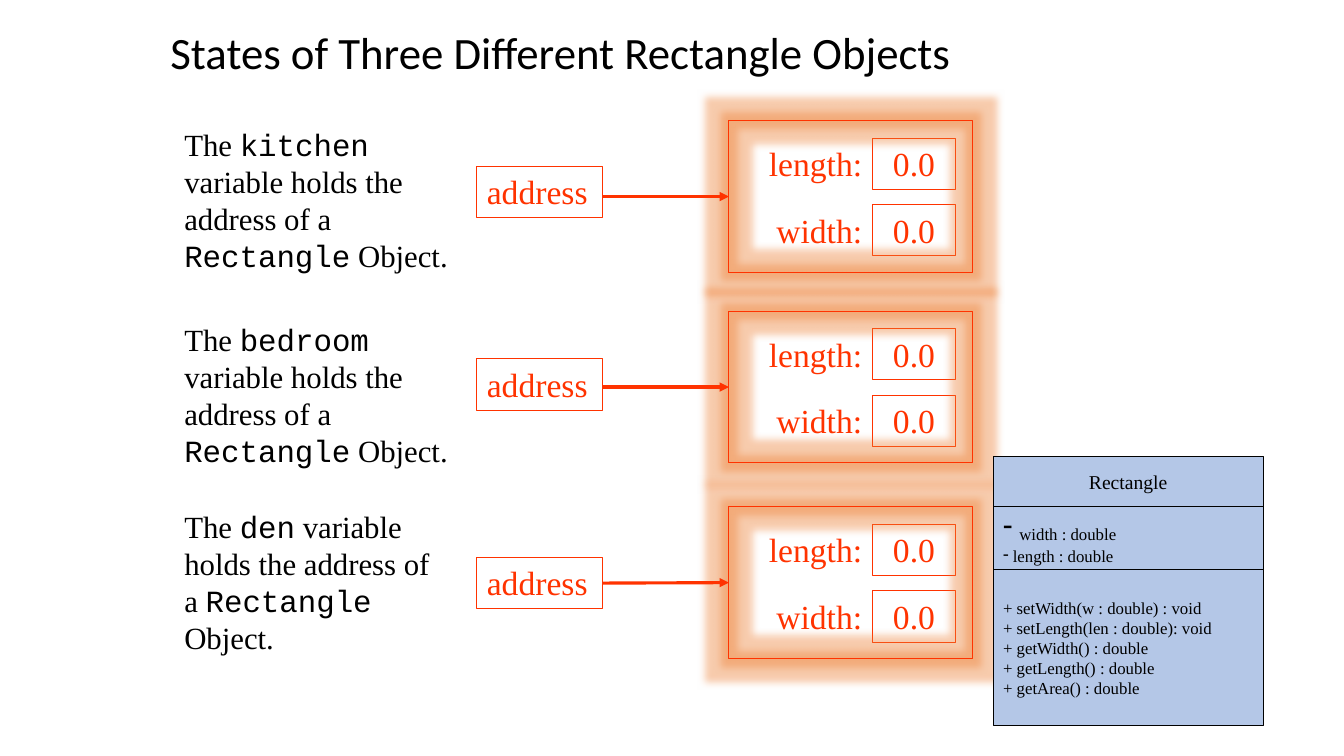
from lxml.etree import SubElement
from pptx import Presentation
from pptx.dml.color import RGBColor
from pptx.enum.shapes import MSO_CONNECTOR, MSO_SHAPE
from pptx.enum.text import MSO_ANCHOR as ANCHOR, MSO_AUTO_SIZE as FIT, PP_ALIGN as ALIGN
from pptx.oxml.ns import qn
from pptx.util import Inches, Pt

# Content
TITLE = "States of Three Different Rectangle Objects"
# variable, top of text, top of address box, top of object
VARIABLES = [
    ("kitchen", 1.2, 1.65, 1.2),
    ("bedroom", 3.13, 3.56, 3.09),
    ("den", 4.99, 5.53, 5.03),
]
FIELDS = [("length:", "0.0"), ("width:", "0.0")]
CLASS_NAME = "Rectangle"
ATTRIBUTES = [[(" ", {"size": 20}), "width : double"], " length : double"]
METHODS = [
    "+ setWidth(w : double) : void",
    "+ setLength(len : double): void",
    "+ getWidth() : double",
    "+ getLength() : double",
    "+ getArea() : double",
]

# Format
RED, BLACK, BLUE, GLOW = "FF3300", "000000", "B4C7E7", "ED7D31"
SERIF, MONO = "Times New Roman", "Courier New"

# Layout, in inches
ADDRESS_LEFT, ADDRESS_WIDTH, BOX_HEIGHT = 4.73, 1.25, 0.51
OBJECT_LEFT, OBJECT_WIDTH, OBJECT_HEIGHT = 7.23, 2.42, 1.5
LABEL_LEFT, LABEL_WIDTH, VALUE_LEFT, VALUE_WIDTH = 7.4, 1.25, 8.65, 0.83
FIELD_OFFSET, FIELD_PITCH = 0.17, 0.66
UML_LEFT, UML_WIDTH = 9.85, 2.68


def rgb(color):
    return RGBColor.from_string(color)


def write(shape, paragraphs, size=24, font=SERIF, color=RED, align=ALIGN.LEFT,
          anchor=ANCHOR.TOP, wrap=True, bullet=None):
    """Each paragraph is a string or a list of strings and (text, format) pairs."""
    frame = shape.text_frame
    frame.word_wrap, frame.vertical_anchor = wrap, anchor
    frame.auto_size = FIT.NONE
    for index, parts in enumerate(paragraphs):
        paragraph = frame.paragraphs[0] if index == 0 else frame.add_paragraph()
        paragraph.alignment = align
        if bullet:
            SubElement(paragraph._p.get_or_add_pPr(), qn("a:buChar")).set("char", bullet)
        for part in [parts] if isinstance(parts, str) else parts:
            text, extra = (part, {}) if isinstance(part, str) else part
            run = paragraph.add_run()
            run.text = text
            run.font.name = extra.get("font", font)
            run.font.size = Pt(extra.get("size", size))
            run.font.color.rgb = rgb(color)


def add_box(shapes, left, top, width, height, line=RED, fill=None):
    box = shapes.add_shape(MSO_SHAPE.RECTANGLE, *map(Inches, (left, top, width, height)))
    box.shadow.inherit = False
    if fill:
        box.fill.solid()
        box.fill.fore_color.rgb = rgb(fill)
    else:
        box.fill.background()
    box.line.color.rgb = rgb(line)
    box.line.width = Pt(0.75)
    return box


def add_label(shapes, left, top, width, height, paragraphs, **style):
    label = shapes.add_textbox(*map(Inches, (left, top, width, height)))
    write(label, paragraphs, **style)


def add_glow(shape, color, radius, opacity):
    effects = shape._element.spPr.find(qn("a:effectLst"))
    glow = SubElement(effects, qn("a:glow"), rad=str(Pt(radius)))
    tint = SubElement(glow, qn("a:srgbClr"), val=color)
    SubElement(tint, qn("a:alpha"), val=str(opacity * 1000))


def add_arrow(shapes, address, target):
    middle = target.top + target.height // 2
    start = address.left + address.width
    arrow = shapes.add_connector(MSO_CONNECTOR.STRAIGHT, start, middle, target.left, middle)
    if abs(address.top + address.height // 2 - middle) < Inches(0.01):
        arrow.begin_connect(address, 3)
    arrow.end_connect(target, 1)
    arrow.line.color.rgb = rgb(RED)
    arrow.line.width = Pt(2.25)
    SubElement(arrow.line._get_or_add_ln(), qn("a:tailEnd"), type="triangle")
    SubElement(arrow._element.spPr, qn("a:effectLst"))


def add_variable(shapes, name, text_top, address_top, object_top):
    # Address box and the fields of the object
    address = add_box(shapes, ADDRESS_LEFT, address_top, ADDRESS_WIDTH, BOX_HEIGHT)
    write(address, ["address"])
    for index, (field, value) in enumerate(FIELDS):
        top = object_top + FIELD_OFFSET + index * FIELD_PITCH
        value_box = add_box(shapes, VALUE_LEFT, top, VALUE_WIDTH, BOX_HEIGHT)
        write(value_box, [value], align=ALIGN.CENTER)
        add_label(shapes, LABEL_LEFT, top, LABEL_WIDTH, 0.5, [field], align=ALIGN.RIGHT)

    # Glowing frame and the arrow to it
    frame = add_box(shapes, OBJECT_LEFT, object_top, OBJECT_WIDTH, OBJECT_HEIGHT)
    add_glow(frame, GLOW, radius=11, opacity=40)
    add_arrow(shapes, address, frame)

    # Explanation
    sentence = ["The ", (name, {"font": MONO}), " variable holds the address of a ",
                (CLASS_NAME, {"font": MONO}), " Object."]
    add_label(shapes, 1.73, text_top, 2.83, 1.58, [sentence], size=22, color=BLACK)


def add_class_diagram(shapes):
    group = shapes.add_group_shape()
    sections = [
        (4.53, 0.5, [CLASS_NAME], {"size": 14, "align": ALIGN.CENTER}),
        (5.03, 0.64, ATTRIBUTES, {"size": 12, "bullet": "-"}),
        (5.65, 1.55, METHODS, {"size": 12}),
    ]
    for top, height, lines, style in sections:
        box = add_box(group.shapes, UML_LEFT, top, UML_WIDTH, height, line=BLACK, fill=BLUE)
        write(box, lines, color=BLACK, anchor=ANCHOR.MIDDLE, wrap=False, **style)


def main():
    presentation = Presentation()
    presentation.slide_width, presentation.slide_height = Inches(13.33), Inches(7.5)
    slide = presentation.slides.add_slide(presentation.slide_layouts[5])

    # Title
    title = slide.shapes.title
    title.left, title.top, title.width, title.height = map(Inches, (1.59, 0, 8.03, 1.09))
    write(title, [TITLE], size=32, font="Calibri", color=BLACK, anchor=ANCHOR.MIDDLE)
    title.text_frame.paragraphs[0].line_spacing = 0.9

    # Variables with their objects, then the class diagram
    for variable in VARIABLES:
        add_variable(slide.shapes, *variable)
    add_class_diagram(slide.shapes)
    presentation.save("out.pptx")


if __name__ == "__main__":
    main()
